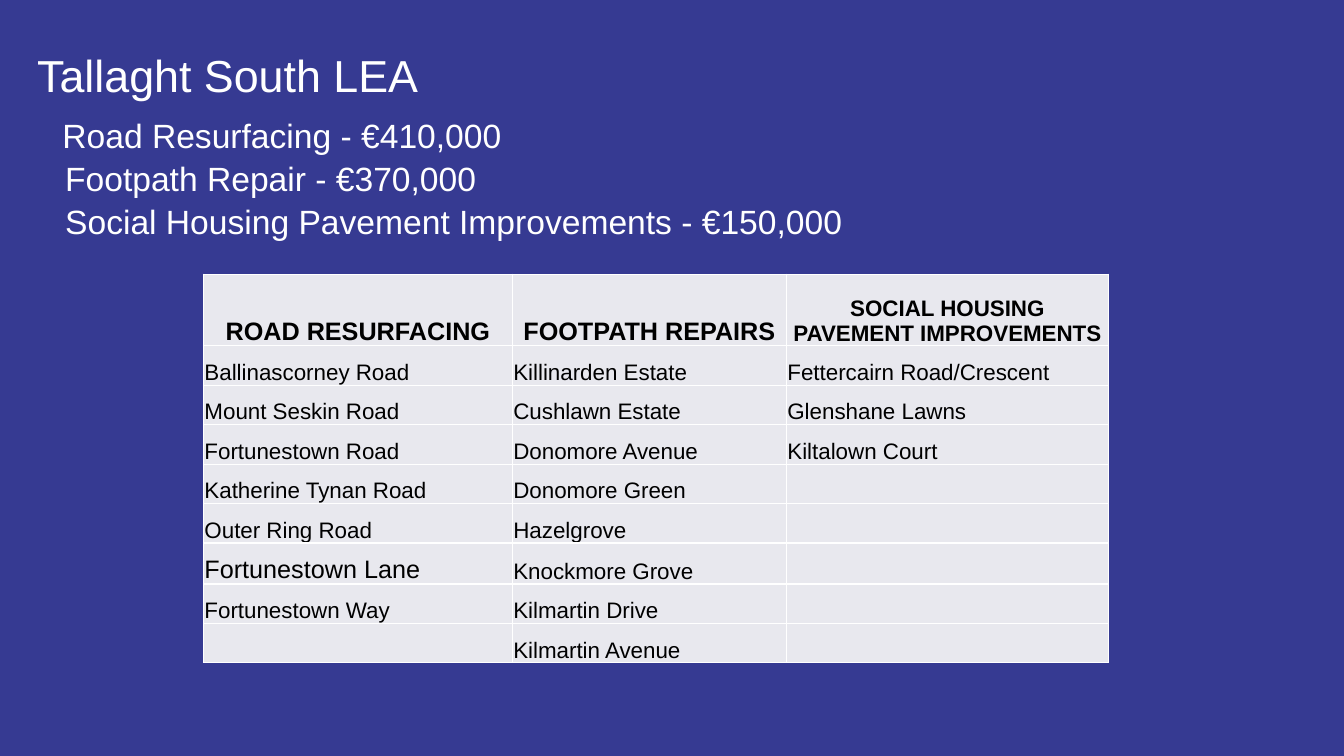
import pptx
import pptx.dml.color
import pptx.enum.text
import pptx.oxml
import pptx.oxml.ns
import pptx.util

Pt = pptx.util.Pt
ALIGN = pptx.enum.text.PP_ALIGN
ANCHOR = pptx.enum.text.MSO_ANCHOR


def color(hex_string):
    return pptx.dml.color.RGBColor.from_string(hex_string)


class SlideBuilder:
    font_name = "Arial"
    background = "363A92"
    light = "FFFFFF"
    dark = "000000"
    cell_fill = "E8E8EE"
    border_width = Pt(1)

    def __init__(self, presentation):
        self.slide = presentation.slides.add_slide(presentation.slide_layouts[6])
        fill = self.slide.background.fill
        fill.solid()
        fill.fore_color.rgb = color(self.background)

    def style_font(self, paragraph, size, hex_string, bold=False):
        font = paragraph.font
        font.name, font.size, font.bold = self.font_name, Pt(size), bold
        font.color.rgb = color(hex_string)

    def add_text(self, left, top, width, height, lines):
        """Each line is (text, size, left indent, space before)."""
        frame = self.slide.shapes.add_textbox(
            Pt(left), Pt(top), Pt(width), Pt(height)).text_frame
        frame.word_wrap = True
        frame.margin_left = frame.margin_right = 0
        frame.margin_top = frame.margin_bottom = 0
        for index, (text, size, indent, space_before) in enumerate(lines):
            paragraph = frame.add_paragraph() if index else frame.paragraphs[0]
            paragraph.text = text
            paragraph.line_spacing = 1.07
            if space_before:
                paragraph.space_before = Pt(space_before)
            properties = paragraph._p.get_or_add_pPr()
            properties.set("marL", str(Pt(indent)))
            properties.set("indent", "0")
            self.style_font(paragraph, size, self.light)

    def add_borders(self, cell):
        properties = cell._tc.get_or_add_tcPr()
        namespace = pptx.oxml.ns.nsdecls("a")
        for side in ("lnL", "lnR", "lnT", "lnB"):
            properties.append(pptx.oxml.parse_xml(
                f'<a:{side} {namespace} w="{self.border_width}"><a:solidFill>'
                f'<a:srgbClr val="{self.light}"/></a:solidFill></a:{side}>'))

    def fill_cell(self, cell, text, size, header):
        cell.margin_left = cell.margin_right = cell.margin_top = Pt(0.7)
        cell.margin_bottom = 0
        cell.vertical_anchor = ANCHOR.BOTTOM
        self.add_borders(cell)
        cell.fill.solid()
        cell.fill.fore_color.rgb = color(self.cell_fill)
        paragraph = cell.text_frame.paragraphs[0]
        paragraph.text = text
        paragraph.alignment = ALIGN.CENTER if header else ALIGN.LEFT
        self.style_font(paragraph, size, self.dark, header)

    def add_table(self, left, top, widths, heights, rows, large_texts):
        """Texts in large_texts are set at 18 points, all others at 16."""
        table = self.slide.shapes.add_table(
            len(rows), len(widths), Pt(left), Pt(top),
            Pt(sum(widths)), Pt(sum(heights))).table
        table.horz_banding = False
        for column, width in zip(table.columns, widths):
            column.width = Pt(width)
        for row_index, texts in enumerate(rows):
            table.rows[row_index].height = Pt(heights[row_index])
            for column_index, text in enumerate(texts):
                self.fill_cell(table.cell(row_index, column_index), text,
                               18 if text in large_texts else 16,
                               header=row_index == 0)


BUDGET_LINES = [
    ("Tallaght South LEA", 32, 0, 0),
    ("Road Resurfacing - €410,000", 24, 18, 7),
    ("Footpath Repair - €370,000", 24, 20, 0),
    ("Social Housing Pavement Improvements - €150,000", 24, 20, 0),
]
WORKS = [
    ("ROAD RESURFACING", "FOOTPATH REPAIRS", "SOCIAL HOUSING PAVEMENT IMPROVEMENTS"),
    ("Ballinascorney Road", "Killinarden Estate", "Fettercairn Road/Crescent"),
    ("Mount Seskin Road", "Cushlawn Estate", "Glenshane Lawns"),
    ("Fortunestown Road", "Donomore Avenue", "Kiltalown Court"),
    ("Katherine Tynan Road", "Donomore Green", ""),
    ("Outer Ring Road", "Hazelgrove", ""),
    ("Fortunestown Lane", "Knockmore Grove", ""),
    ("Fortunestown Way", "Kilmartin Drive", ""),
    ("", "Kilmartin Avenue", ""),
]
LARGE_TEXTS = {"ROAD RESURFACING", "FOOTPATH REPAIRS", "Fortunestown Lane"}


def main():
    presentation = pptx.Presentation()
    presentation.slide_width, presentation.slide_height = Pt(960), Pt(540)
    builder = SlideBuilder(presentation)
    builder.add_text(26.6, 31.7, 652.3, 124.6, BUDGET_LINES)
    row_heights = [51.2] + [28.2] * 5 + [29.3] + [28.2] * 2
    builder.add_table(145.4, 195.8, [220.6, 195.8, 230], row_heights,
                      WORKS, LARGE_TEXTS)
    presentation.save("out.pptx")


if __name__ == "__main__":
    main()
